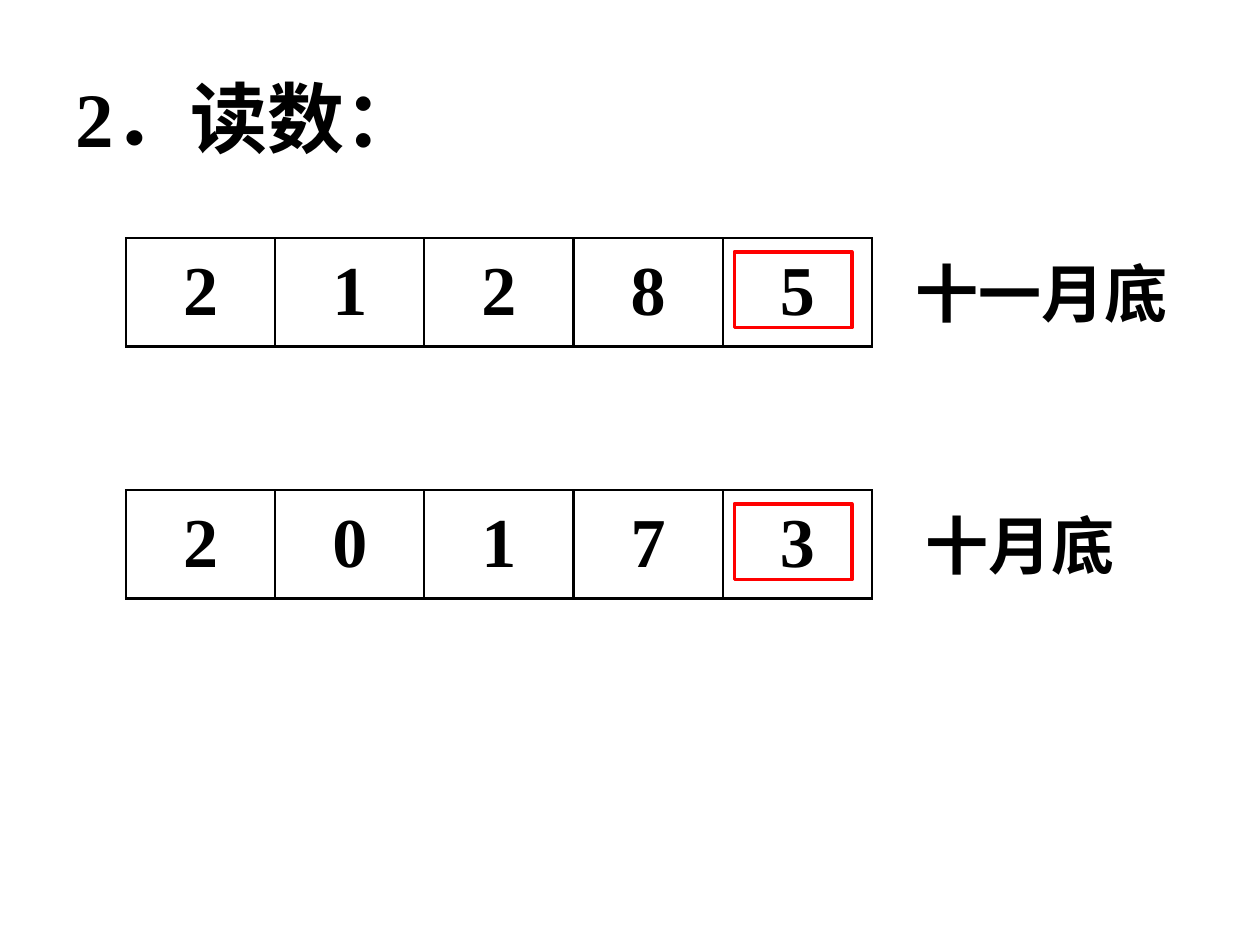
from lxml.etree import SubElement
from pptx import Presentation
from pptx.dml.color import RGBColor
from pptx.enum.shapes import MSO_SHAPE
from pptx.enum.text import MSO_ANCHOR, PP_ALIGN
from pptx.oxml.ns import qn
from pptx.util import Inches, Pt


def color(hex_text):
    return RGBColor.from_string(hex_text)


class SlideBuilder:
    font_name = "Times New Roman"
    ink = "000000"
    paper = "FFFFFF"
    accent = "FF0000"

    def __init__(self, page):
        self.page = page

    def add_span(self, para, text, size):
        span = para.add_run()
        span.text = text
        span.font.name = self.font_name
        span.font.size = Pt(size)
        span.font.bold = True
        span.font.color.rgb = color(self.ink)

    def text(self, left, top, width, height, text, size, anchor=MSO_ANCHOR.TOP):
        box = self.page.shapes.add_textbox(
            Inches(left), Inches(top), Inches(width), Inches(height))
        frame = box.text_frame
        frame.word_wrap = True
        frame.vertical_anchor = anchor
        self.add_span(frame.paragraphs[0], text, size)

    def cell_borders(self, cell):
        """Draw all four sides, placed before the fill as the schema asks."""
        properties = cell._tc.get_or_add_tcPr()
        for index, side in enumerate(("lnL", "lnR", "lnT", "lnB")):
            line = SubElement(properties, qn(f"a:{side}"), w=str(Pt(1.5)))
            fill = SubElement(line, qn("a:solidFill"))
            SubElement(fill, qn("a:srgbClr"), val=self.ink)
            properties.insert(index, line)

    def digit_table(self, left, top, width, height, digits):
        table = self.page.shapes.add_table(
            1, len(digits), Inches(left), Inches(top),
            Inches(width), Inches(height)).table
        for column, digit in enumerate(digits):
            table.columns[column].width = Inches(width / len(digits))
            cell = table.cell(0, column)
            cell.fill.solid()
            cell.fill.fore_color.rgb = color(self.paper)
            cell.vertical_anchor = MSO_ANCHOR.MIDDLE
            para = cell.text_frame.paragraphs[0]
            para.alignment = PP_ALIGN.CENTER
            self.add_span(para, digit, 40)
            self.cell_borders(cell)

    def highlight(self, left, top, width, height):
        frame = self.page.shapes.add_shape(
            MSO_SHAPE.RECTANGLE, Inches(left), Inches(top),
            Inches(width), Inches(height))
        frame.shadow.inherit = False
        frame.fill.background()
        frame.line.color.rgb = color(self.accent)
        frame.line.width = Pt(2.25)


def main():
    deck = Presentation()
    deck.slide_width, deck.slide_height = Inches(10), Inches(7.5)
    builder = SlideBuilder(deck.slides.add_slide(deck.slide_layouts[6]))

    builder.text(0.5, 0.3, 9, 1.25, "2．读数：", 44, MSO_ANCHOR.MIDDLE)
    readings = [
        (1.89, "21285", "十一月底", 7.17),
        (3.89, "20173", "十月底", 7.25),
    ]
    for top, digits, label, label_left in readings:
        builder.digit_table(1, top, 5.92, 0.86, digits)
        builder.highlight(5.83, top + 0.11, 0.93, 0.6)
        builder.text(label_left, top + 0.08, 2.5, 0.7, label, 36)

    deck.save("out.pptx")


if __name__ == "__main__":
    main()
